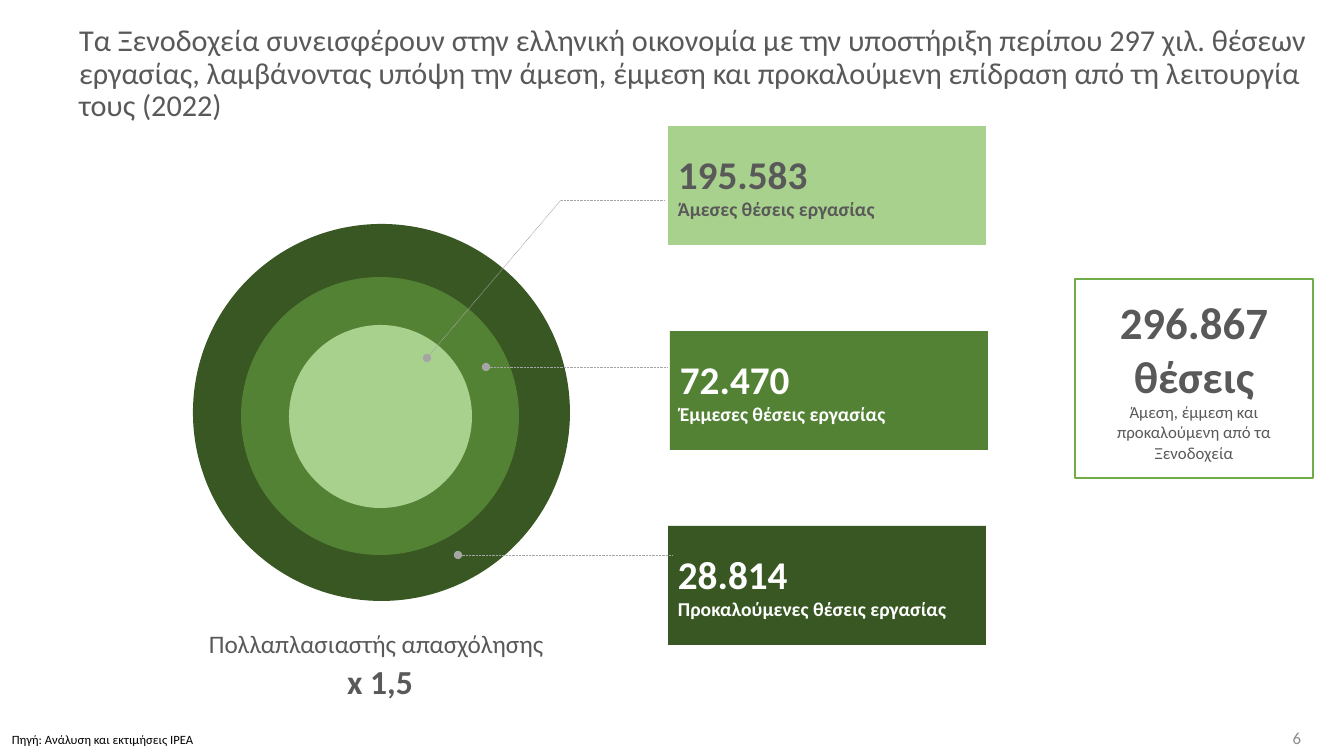
from dataclasses import dataclass

from lxml import etree
from pptx import Presentation
from pptx.dml.color import RGBColor
from pptx.enum.dml import MSO_LINE
from pptx.enum.shapes import MSO_CONNECTOR, MSO_SHAPE
from pptx.enum.text import MSO_ANCHOR, MSO_AUTO_SIZE, PP_ALIGN
from pptx.oxml.ns import qn
from pptx.util import Pt

LEFT, CENTER, RIGHT = PP_ALIGN.LEFT, PP_ALIGN.CENTER, PP_ALIGN.RIGHT
TOP, MIDDLE = MSO_ANCHOR.TOP, MSO_ANCHOR.MIDDLE
OVAL, RECTANGLE = MSO_SHAPE.OVAL, MSO_SHAPE.RECTANGLE
STRAIGHT = MSO_CONNECTOR.STRAIGHT
DOTTED = MSO_LINE.ROUND_DOT
NO_AUTOFIT = MSO_AUTO_SIZE.NONE

EMU_PER_PX = 914400 / 100.8
TITLE_ONLY = 5


@dataclass(frozen=True)
class Theme:
    font: str = "Calibri"
    gray: str = "595959"
    page_gray: str = "8C8C8C"
    leader: str = "A5A5A5"
    white: str = "FFFFFF"
    black: str = "000000"
    light: str = "A9D18E"
    mid: str = "548235"
    dark: str = "385723"
    frame: str = "70AD47"
    title: float = 21.6
    total: int = 32
    figure: int = 28
    factor: int = 24
    caption: int = 18
    label: int = 14
    small: int = 12
    source: int = 9


THEME = Theme()


@dataclass(frozen=True)
class Area:
    left: int
    top: int
    width: int
    height: int


@dataclass(frozen=True)
class Span:
    text: str
    size: float
    color: str = THEME.gray
    bold: bool = False


@dataclass(frozen=True)
class Ring:
    area: Area
    fill: str


@dataclass(frozen=True)
class Effect:
    left: int
    top: int
    figure: str
    label: str
    fill: str
    color: str


@dataclass(frozen=True)
class Leader:
    start: tuple[int, int]
    end: tuple[int, int]
    dot: bool = True


RINGS = [
    Ring(Area(193, 224, 377, 377), THEME.dark),
    Ring(Area(241, 277, 278, 278), THEME.mid),
    Ring(Area(289, 325, 183, 183), THEME.light),
]
EFFECTS = [
    Effect(668, 126, "195.583", "Άμεσες θέσεις εργασίας", THEME.light, THEME.gray),
    Effect(670, 331, "72.470", "Έμμεσες θέσεις εργασίας", THEME.mid, THEME.white),
    Effect(668, 526, "28.814", "Προκαλούμενες θέσεις εργασίας", THEME.dark, THEME.white),
]
LEADERS = [
    Leader((427, 358), (561, 200)),
    Leader((561, 200), (664, 200), dot=False),
    Leader((486, 367), (668, 367)),
    Leader((458, 555), (672, 555)),
]


def px(length: int) -> int:
    return round(length * EMU_PER_PX)


def bounds(area: Area) -> list[int]:
    return [px(n) for n in (area.left, area.top, area.width, area.height)]


def rgb(color: str) -> RGBColor:
    return RGBColor.from_string(color)


def write(box, paras: list[list[Span]], align=LEFT, anchor=MIDDLE, spacing=None) -> None:
    frame = box.text_frame
    for name, value in {"word_wrap": True, "auto_size": NO_AUTOFIT,
                        "vertical_anchor": anchor}.items():
        setattr(frame, name, value)
    for index, spans in enumerate(paras):
        para = frame.add_paragraph() if index else frame.paragraphs[0]
        para.alignment = align
        para.line_spacing = spacing
        for span in spans:
            run = para.add_run()
            run.text = span.text
            for name, value in {"name": THEME.font, "size": Pt(span.size),
                                "bold": span.bold}.items():
                setattr(run.font, name, value)
            run.font.color.rgb = rgb(span.color)


def add_block(page, kind, area: Area, fill: str, line: str | None = None):
    block = page.shapes.add_shape(kind, *bounds(area))
    block.shadow.inherit = False
    block.fill.solid()
    block.fill.fore_color.rgb = rgb(fill)
    if line:
        block.line.color.rgb = rgb(line)
        block.line.width = Pt(1)
    else:
        block.line.fill.background()
    return block


def add_text(page, area: Area, paras: list[list[Span]], align=LEFT, anchor=MIDDLE) -> None:
    write(page.shapes.add_textbox(*bounds(area)), paras, align, anchor)


def add_leader(page, leader: Leader) -> None:
    ends = [px(n) for n in leader.start + leader.end]
    connector = page.shapes.add_connector(STRAIGHT, *ends)
    connector.line.color.rgb = rgb(THEME.leader)
    connector.line.width = Pt(0.5)
    connector.line.dash_style = DOTTED
    properties = connector._element.spPr
    if leader.dot:
        etree.SubElement(properties.find(qn("a:ln")), qn("a:headEnd"), type="oval")
    etree.SubElement(properties, qn("a:effectLst"))


def main() -> None:
    deck = Presentation()
    deck.slide_width, deck.slide_height = px(1344), px(756)
    page = deck.slides.add_slide(deck.slide_layouts[TITLE_ONLY])

    # Title
    title = page.shapes.title
    title.left, title.top, title.width, title.height = bounds(Area(69, 23, 1255, 103))
    write(title, [[Span(
        "Τα Ξενοδοχεία συνεισφέρουν στην ελληνική οικονομία με την υποστήριξη περίπου "
        "297 χιλ. θέσεων εργασίας, λαμβάνοντας υπόψη την άμεση, έμμεση και προκαλούμενη "
        "επίδραση από τη λειτουργία τους (2022)", THEME.title)]], spacing=0.9)

    # Nested rings, effect boxes and the leaders between them
    for ring in RINGS:
        add_block(page, OVAL, ring.area, ring.fill)
    for effect in EFFECTS:
        box = add_block(page, RECTANGLE, Area(effect.left, effect.top, 318, 119), effect.fill)
        write(box, [[Span(effect.figure, THEME.figure, effect.color, True)],
                    [Span(effect.label, THEME.label, effect.color, True)]])
    for leader in LEADERS:
        add_leader(page, leader)

    # Employment multiplier
    add_text(page, Area(186, 613, 388, 95), [
        [Span("Πολλαπλασιαστής απασχόλησης", THEME.caption), Span(" ", THEME.factor)],
        [Span("x 1,5", THEME.factor, bold=True)]], CENTER)

    # Total
    total = add_block(page, RECTANGLE, Area(1075, 279, 238, 199), THEME.white, THEME.frame)
    write(total, [
        [Span("296.867 θέσεις", THEME.total, bold=True)],
        [Span("Άμεση, έμμεση και προκαλούμενη από τα Ξενοδοχεία", THEME.small)]], CENTER)

    # Source and page number
    add_text(page, Area(2, 727, 627, 25),
             [[Span("Πηγή: Ανάλυση και εκτιμήσεις ΙΡΕΑ", THEME.source, THEME.black)]],
             anchor=TOP)
    add_text(page, Area(1270, 726, 41, 23),
             [[Span("6", THEME.small, THEME.page_gray)]], RIGHT)

    deck.save("out.pptx")


if __name__ == "__main__":
    main()
